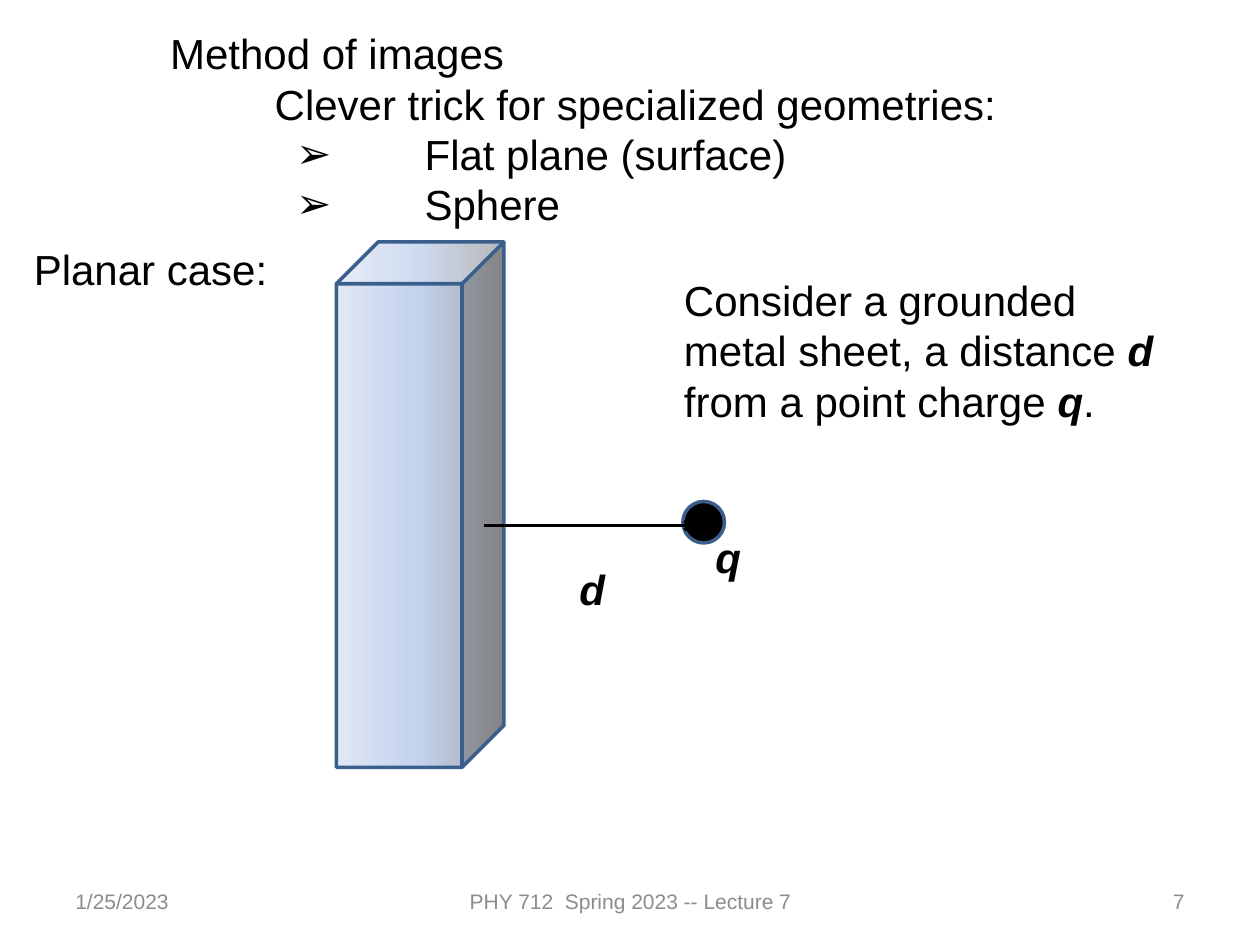
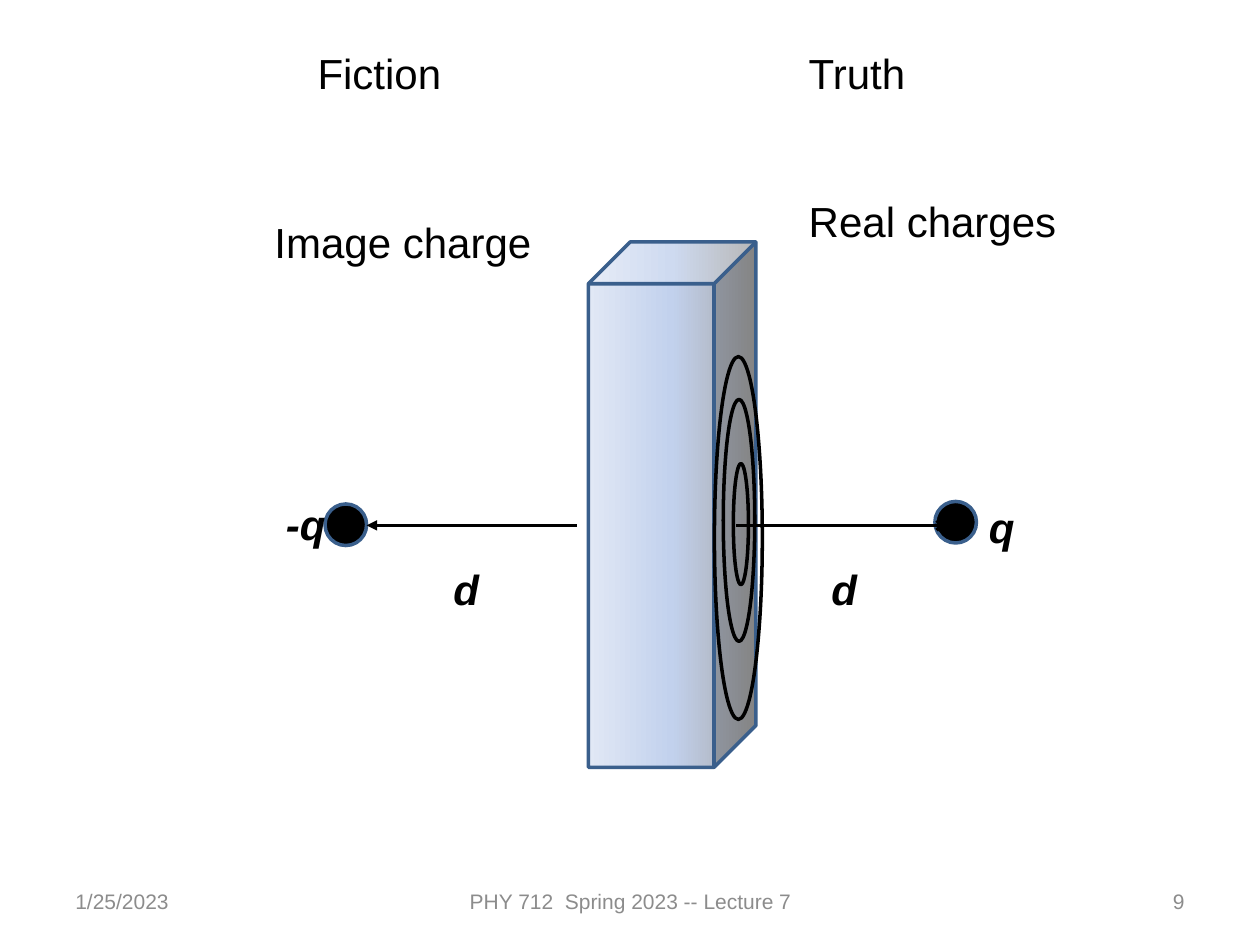
from copy import deepcopy
from dataclasses import dataclass

from lxml import etree
from pptx import Presentation
from pptx import util as u
from pptx.dml.color import RGBColor
from pptx.enum import shapes, text
from pptx.oxml.ns import qn

BLACK = RGBColor(0x00, 0x00, 0x00)
FOOTER_GREY = RGBColor(0x8C, 0x8C, 0x8C)
OUTLINE_BLUE = RGBColor(0x3A, 0x5F, 0x8C)
SHEET_STOPS = (
    (0.0, RGBColor(0xA6, 0xA6, 0xA6)),
    (0.5, RGBColor(0xC2, 0xD1, 0xED)),
    (1.0, RGBColor(0xE1, 0xE8, 0xF5)),
)
FONT = "Arial"
BODY_SIZE = 24
FOOTER_SIZE = 12
LINE_WIDTH = u.Pt(2)
AXIS_TOP = 4.17
CHARGE_SIZE = 0.33
DISTANCE_TOP = 4.42
LABEL_HEIGHT = 0.5
LEFT, CENTER, RIGHT = text.PP_ALIGN.LEFT, text.PP_ALIGN.CENTER, text.PP_ALIGN.RIGHT


@dataclass(frozen=True)
class Box:
    left: float
    top: float
    width: float
    height: float

    def lengths(self) -> tuple:
        return tuple(u.Inches(n) for n in (self.left, self.top, self.width, self.height))


@dataclass(frozen=True)
class Label:
    wording: str
    box: Box
    symbol: bool = False


@dataclass(frozen=True)
class FooterPart:
    wording: str
    left: float
    width: float
    alignment: text.PP_ALIGN


@dataclass(frozen=True)
class ListLine:
    wording: str
    margin: float
    indent: float = 0
    bullet: str = ""


RINGS = (
    Box(5.82, 3.68, 0.12, 0.96),
    Box(5.74, 3.17, 0.25, 1.92),
    Box(5.67, 2.83, 0.38, 2.88),
)
GEOMETRIES = (
    ListLine("Clever trick for specialized geometries:", 0.83),
    ListLine("Flat plane (surface)", 2.02, -1.02, "➢"),
    ListLine("Sphere", 2.02, -1.02, "➢"),
)
CHARGE_LABELS = (
    Label("q", Box(7.75, 3.93, 0.88, LABEL_HEIGHT), True),
    Label("-q", Box(2.17, 3.91, 0.88, LABEL_HEIGHT), True),
)
SIDE_LABELS = (
    Label("Real charges", Box(6.32, 1.5, 3.35, LABEL_HEIGHT)),
    Label("Image charge", Box(2.08, 1.67, 3.35, LABEL_HEIGHT)),
    Label("Truth", Box(6.32, 0.33, 3.35, LABEL_HEIGHT)),
)


def format_runs(paragraph, size: int = BODY_SIZE, color: RGBColor = BLACK,
                symbol: bool = False) -> None:
    for run in paragraph.runs:
        run.font.name = FONT
        run.font.size = u.Pt(size)
        run.font.color.rgb = color
        run.font.bold = run.font.italic = symbol


def place(shape, box: Box) -> None:
    shape.left, shape.top, shape.width, shape.height = box.lengths()
    shape.text_frame.auto_size = text.MSO_AUTO_SIZE.NONE
    shape.text_frame.vertical_anchor = text.MSO_ANCHOR.TOP


def set_title(slide, wording: str, box: Box) -> None:
    title = slide.shapes.title
    place(title, box)
    title.text_frame.text = wording
    paragraph = title.text_frame.paragraphs[0]
    paragraph.alignment = LEFT
    format_runs(paragraph)


def set_list(slide, lines: tuple[ListLine, ...], box: Box) -> None:
    body = slide.placeholders[1]
    place(body, box)
    body.text_frame.text = "\n".join(line.wording for line in lines)
    for paragraph, line in zip(body.text_frame.paragraphs, lines):
        paragraph.space_before = u.Pt(0)
        format_runs(paragraph)
        properties = paragraph._p.get_or_add_pPr()
        properties.set("marL", str(u.Inches(line.margin)))
        properties.set("indent", str(u.Inches(line.indent)))
        if line.bullet:
            etree.SubElement(properties, qn("a:buFont"), typeface=FONT)
            etree.SubElement(properties, qn("a:buChar"), char=line.bullet)
        else:
            etree.SubElement(properties, qn("a:buNone"))


def add_label(slide, label: Label):
    frame = slide.shapes.add_textbox(*label.box.lengths()).text_frame
    frame.word_wrap = True
    frame.text = label.wording
    format_runs(frame.paragraphs[0], symbol=label.symbol)
    return frame


def add_statement(slide, pieces: tuple[str, ...], box: Box) -> None:
    paragraph = add_label(slide, Label("", box)).paragraphs[0]
    for piece in pieces:
        paragraph.add_run().text = piece
    format_runs(paragraph)
    for run in paragraph.runs[1::2]:
        run.font.bold = run.font.italic = True


def add_footer(slide, number: int) -> None:
    parts = (
        FooterPart("1/25/2023", 0.5, 2.33, LEFT),
        FooterPart("PHY 712  Spring 2023 -- Lecture 7", 3.42, 3.17, CENTER),
        FooterPart(str(number), 7.17, 2.33, RIGHT),
    )
    for part in parts:
        frame = add_label(slide, Label(part.wording, Box(part.left, 6.95, part.width, 0.4)))
        frame.vertical_anchor = text.MSO_ANCHOR.MIDDLE
        frame.paragraphs[0].alignment = part.alignment
        format_runs(frame.paragraphs[0], FOOTER_SIZE, FOOTER_GREY)


def add_outlined(collection, kind: shapes.MSO_SHAPE, box: Box, color: RGBColor):
    shape = collection.add_shape(kind, *box.lengths())
    shape.shadow.inherit = False
    shape.line.color.rgb = color
    shape.line.width = LINE_WIDTH
    return shape


def add_sheet(slide, left: float) -> None:
    sheet = add_outlined(slide.shapes, shapes.MSO_SHAPE.CUBE,
                         Box(left, 1.92, 1.33, 4.17), OUTLINE_BLUE)
    sheet.fill.gradient()
    sheet.fill.gradient_angle = 180
    stop_list = sheet.element.spPr.find(".//" + qn("a:gsLst"))
    stop_list.append(deepcopy(stop_list[-1]))
    for stop, (position, color) in zip(sheet.fill.gradient_stops, SHEET_STOPS):
        stop.position = position
        stop.color.rgb = color


def add_charge(slide, left: float, top: float) -> None:
    charge = add_outlined(slide.shapes, shapes.MSO_SHAPE.OVAL,
                          Box(left, top, CHARGE_SIZE, CHARGE_SIZE), OUTLINE_BLUE)
    charge.fill.solid()
    charge.fill.fore_color.rgb = BLACK


def add_arrow(slide, start: float, end: float, arrow_end: str, arrow_type: str) -> None:
    connector = slide.shapes.add_connector(
        shapes.MSO_CONNECTOR.STRAIGHT,
        u.Inches(start), u.Inches(AXIS_TOP), u.Inches(end), u.Inches(AXIS_TOP))
    connector.line.color.rgb = BLACK
    connector.line.width = LINE_WIDTH
    properties = connector.element.spPr
    etree.SubElement(properties.find(qn("a:ln")), qn(arrow_end), type=arrow_type)
    etree.SubElement(properties, qn("a:effectLst"))


def add_distance(slide, left: float) -> None:
    add_label(slide, Label("d", Box(left, DISTANCE_TOP, 0.46, LABEL_HEIGHT), True))


def add_sheet_and_charge(slide, left: float) -> None:
    add_sheet(slide, left)
    add_charge(slide, left + 2.75, 3.98)
    add_arrow(slide, left + 1.17, left + 2.85, "a:tailEnd", "arrow")
    add_distance(slide, left + 1.83)


def add_rings(slide) -> None:
    group = slide.shapes.add_group_shape()
    for box in RINGS:
        add_outlined(group.shapes, shapes.MSO_SHAPE.OVAL, box, BLACK).fill.background()


def build_planar_case(presentation) -> None:
    slide = presentation.slides.add_slide(presentation.slide_layouts[1])
    set_title(slide, "Method of images", Box(1.25, 0.17, 7.42, LABEL_HEIGHT))
    set_list(slide, GEOMETRIES, Box(1.25, 0.57, 7.42, 1.32))
    add_footer(slide, 7)
    add_label(slide, Label("Planar case:", Box(0.17, 1.88, 8.67, LABEL_HEIGHT)))
    add_sheet_and_charge(slide, 2.67)
    add_statement(
        slide,
        ("Consider a grounded metal sheet, a distance ", "d",
         " from a point charge ", "q", "."),
        Box(5.33, 2.13, 4.08, 1.31))
    add_label(slide, Label("q", Box(5.58, 4.17, 0.58, LABEL_HEIGHT), True))


def build_image_charge(presentation) -> None:
    slide = presentation.slides.add_slide(presentation.slide_layouts[5])
    set_title(slide, "Fiction", Box(2.42, 0.33, 3.35, LABEL_HEIGHT))
    add_footer(slide, 9)
    add_sheet_and_charge(slide, 4.67)
    add_rings(slide)
    add_charge(slide, 2.58, 4)
    add_arrow(slide, 2.91, 4.58, "a:headEnd", "triangle")
    add_distance(slide, 3.5)
    for label in CHARGE_LABELS + SIDE_LABELS:
        add_label(slide, label)


def main() -> None:
    presentation = Presentation()
    presentation.slide_width = u.Inches(10)
    presentation.slide_height = u.Inches(7.5)
    build_planar_case(presentation)
    build_image_charge(presentation)
    presentation.save("out.pptx")


if __name__ == "__main__":
    main()
